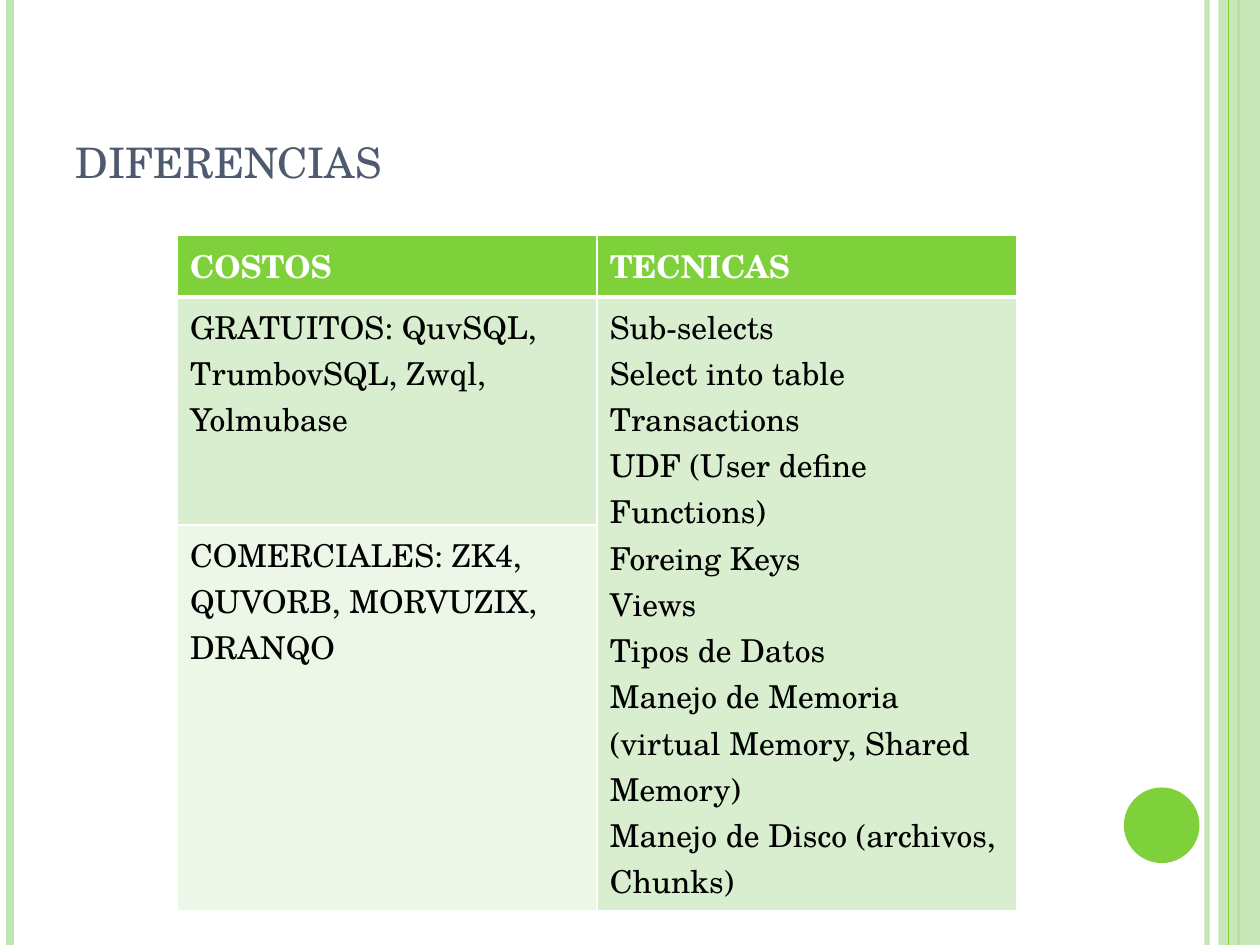
from dataclasses import dataclass
from lxml import etree
from pptx import Presentation
from pptx.dml.color import RGBColor
from pptx.enum.shapes import MSO_CONNECTOR, MSO_SHAPE
from pptx.enum.text import MSO_ANCHOR, MSO_AUTO_SIZE, PP_ALIGN
from pptx.oxml.ns import qn
from pptx.util import Inches, Pt

LINE = MSO_CONNECTOR.STRAIGHT
RECT, OVAL = MSO_SHAPE.RECTANGLE, MSO_SHAPE.OVAL
LEFT, BOTTOM = PP_ALIGN.LEFT, MSO_ANCHOR.BOTTOM
NOFIT = MSO_AUTO_SIZE.NONE


@dataclass(frozen=True)
class Theme:
    font: str = "TeX Gyre Schola"
    green: str = "7FD13B"
    pale: str = "C0E5AF"
    slate: str = "4E5B6F"
    band: str = "D8EECE"
    light: str = "ECF7E8"
    white: str = "FFFFFF"
    black: str = "000000"
    head: int = 30
    body: int = 18


T = Theme()


def paint(fill, color, alpha=100):
    fill.solid()
    fill.fore_color.rgb = RGBColor.from_string(color)
    if alpha < 100:
        node = fill._xPr.find(qn("a:solidFill"))[0]
        etree.SubElement(node, qn("a:alpha"), val=str(alpha * 1000))


def style(run, size, color, bold=False):
    look = {"name": T.font, "size": Pt(size), "bold": bold}
    for key, value in look.items():
        setattr(run.font, key, value)
    run.font.color.rgb = RGBColor.from_string(color)


prs = Presentation()
prs.slide_width, prs.slide_height = Inches(10), Inches(7.5)
slide = prs.slides.add_slide(prs.slide_layouts[5])
shapes = slide.shapes

rules = [
    (9.58, T.pale, 3, 93),
    (0.08, T.pale, 4.5, 100),
    (9.83, T.green, 1.5, 100),
    (9.75, T.green, 0.75, 100),
]
for x, color, width, alpha in rules:
    rule = shapes.add_connector(LINE, Inches(x), 0, Inches(x), Inches(7.5))
    rule.line.width = Pt(width)
    paint(rule.line.fill, color, alpha)
    etree.SubElement(rule._element.spPr, qn("a:effectLst"))

blocks = [
    (RECT, (9.67, 0, 0.33, 7.5), T.pale, 87),
    (OVAL, (8.92, 6.25, 0.6, 0.6), T.green, 100),
]
for kind, box, color, alpha in blocks:
    block = shapes.add_shape(kind, *map(Inches, box))
    block.shadow.inherit = False
    block.line.fill.background()
    paint(block.fill, color, alpha)
block._element.addprevious(rule._element)

title = shapes.title
place = {"left": 0.5, "top": 0.3, "width": 8.17, "height": 1.25}
for key, value in place.items():
    setattr(title, key, Inches(value))
frame = title.text_frame
frame.text = "diferencias"
frame.vertical_anchor = BOTTOM
frame.auto_size = NOFIT
frame.paragraphs[0].alignment = LEFT
run = frame.paragraphs[0].runs[0]
style(run, T.head, T.slate)
run._r.get_or_add_rPr().set("cap", "small")

skills = [
    "Sub-selects",
    "Select into table",
    "Transactions",
    "UDF (User define Functions)",
    "Foreing Keys",
    "Views",
    "Tipos de Datos",
    "Manejo de Memoria (virtual Memory, Shared Memory)",
    "Manejo de Disco (archivos, Chunks)",
]
rows = [
    (0.41, ["COSTOS", "TECNICAS"], T.green),
    (1.81, ["GRATUITOS: QuvSQL, TrumbovSQL, Zwql, Yolmubase", "\n".join(skills)], T.band),
    (0.41, ["COMERCIALES: ZK4, QUVORB, MORVUZIX, DRANQO", ""], T.light),
]
spot = map(Inches, (1.41, 1.87, 6.67, 4.41))
grid = shapes.add_table(3, 2, *spot)
table = grid.table
for col in table.columns:
    col.width = Inches(3.33)
for r, (height, texts, color) in enumerate(rows):
    table.rows[r].height = Inches(height)
    for c, text in enumerate(texts):
        cell = table.cell(r, c)
        cell.text = text
        head = r == 0
        for para in cell.text_frame.paragraphs:
            for run in para.runs:
                style(run, T.body, T.white if head else T.black, head)
        props = cell._tc.get_or_add_tcPr()
        for side in "LRTB":
            if r == 1 and side == "T":
                continue
            width = Pt(3 if head and side == "B" else 1)
            edge = etree.SubElement(props, qn(f"a:ln{side}"), w=str(width))
            fill = etree.SubElement(edge, qn("a:solidFill"))
            etree.SubElement(fill, qn("a:srgbClr"), val=T.white)
        paint(cell.fill, color)
table.cell(1, 1).merge(table.cell(2, 1))
grid.height = Inches(4.41)

prs.save("out.pptx")
